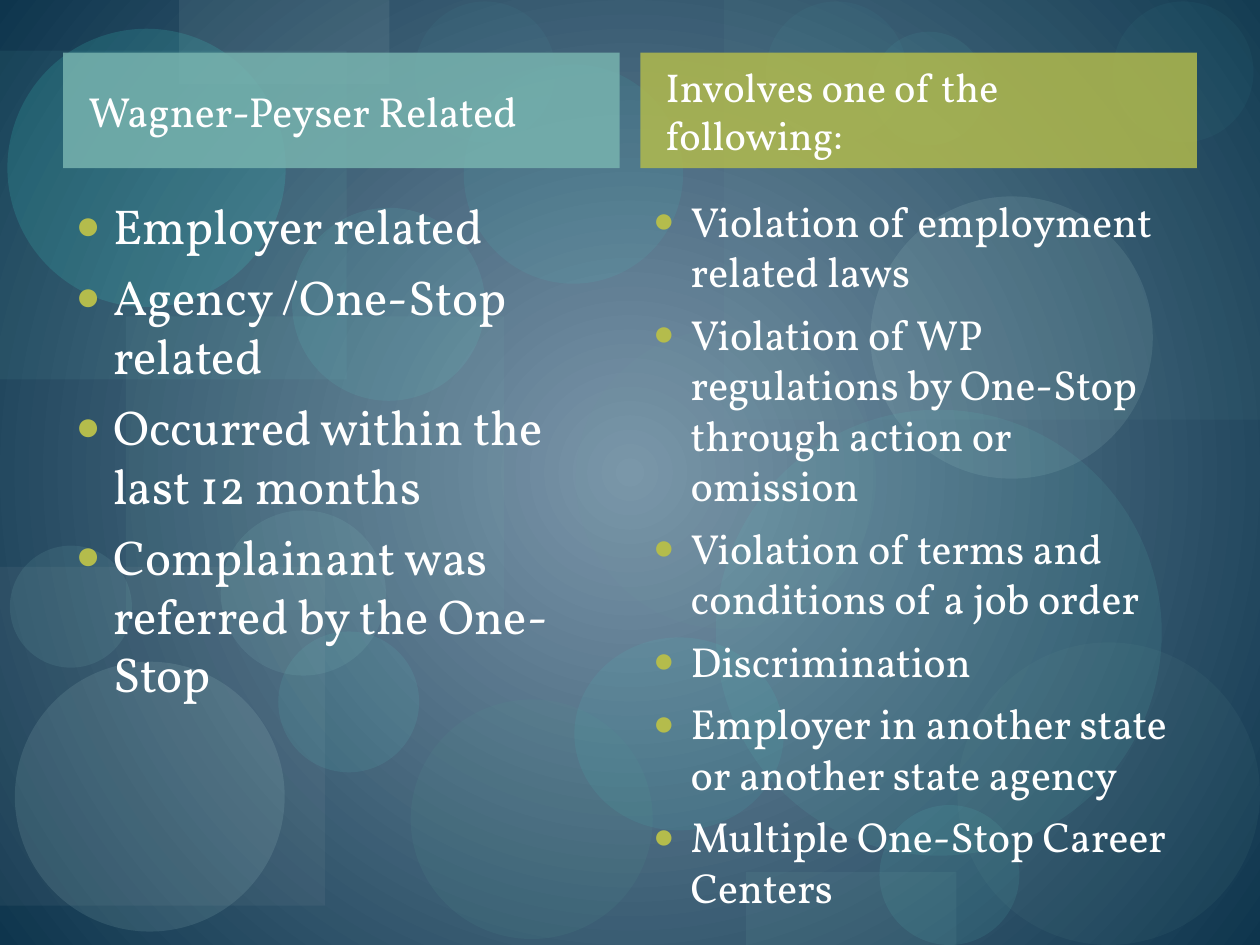
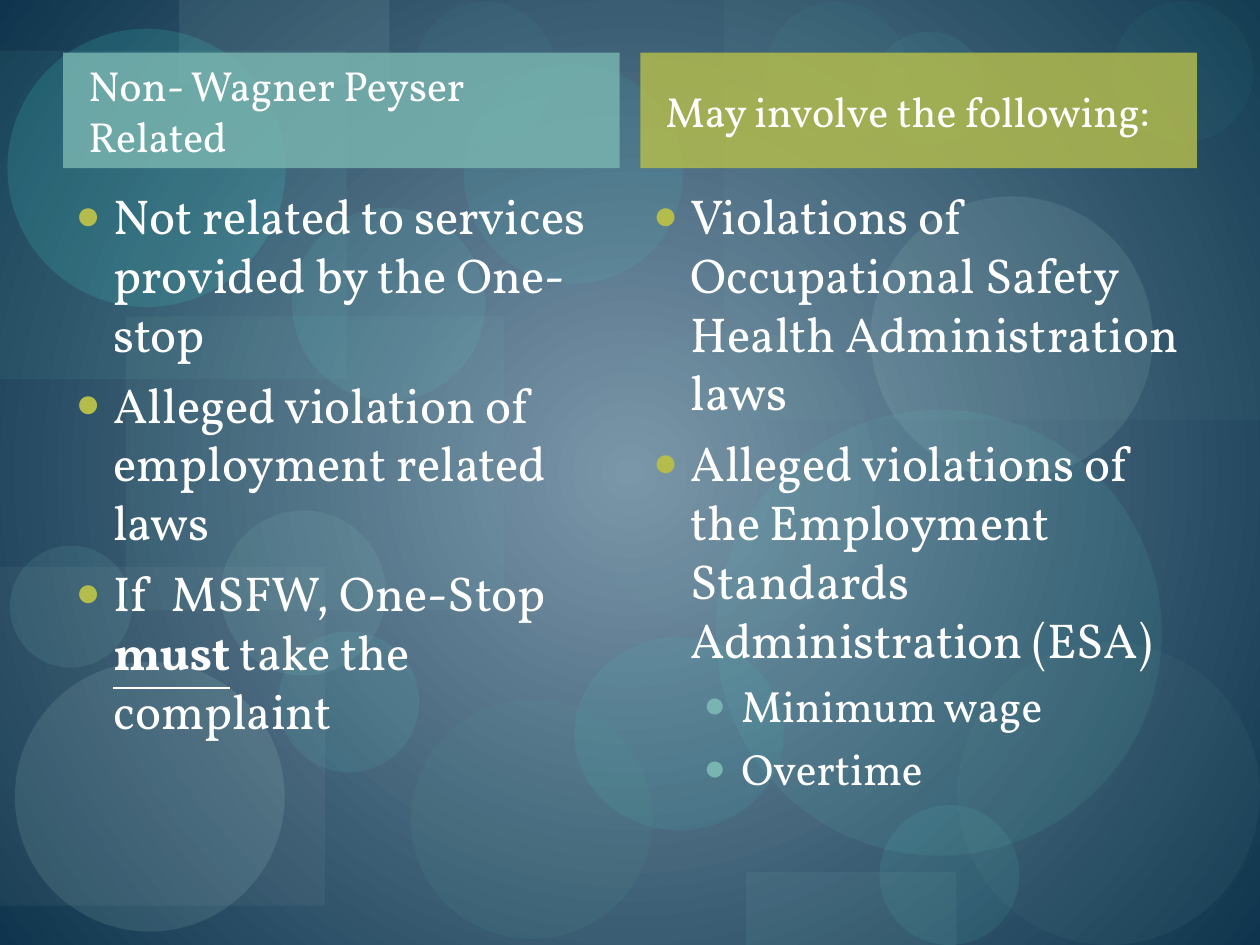
from lxml import etree
from pptx import Presentation
from pptx.dml.color import RGBColor
from pptx.enum.shapes import MSO_SHAPE as Preset
from pptx.enum.text import MSO_ANCHOR as Anchor, MSO_AUTO_SIZE as AutoSize
from pptx.oxml.ns import qn
from pptx.util import Cm, Pt

FONT = "Vollkorn"
WHITE, TEAL, OLIVE = "FFFFFF", "79B5B0", "B4BC4C"
CENTER_BLUE, EDGE_BLUE = "7B96AA", "0E354D"
COMPARISON_LAYOUT = 4
COLUMN_LEFTS = (1.27, 12.91)
COLUMN_WIDTH = 11.22
HEADER_TOP, HEADER_HEIGHT = 1.06, 2.33
HEADER_FILLS = (TEAL, OLIVE)
HEADER_OPACITY = 83
HEADER_FRAME = {
    "margin_left": Cm(0.51), "margin_right": Cm(0.25),
    "margin_top": Cm(0.25), "margin_bottom": Cm(0.25),
    "vertical_anchor": Anchor.MIDDLE,
}
LIST_FRAME = {"vertical_anchor": Anchor.TOP}
LEVELS = (
    {"indent": 0.76, "before": 7, "bullet": OLIVE},
    {"indent": 1.78, "before": 6, "bullet": TEAL},
)
HANGING = Cm(0.76)

BOX, DISC = Preset.RECTANGLE, Preset.OVAL
DECORATIONS = (
    (BOX, 2.54, 6.38, 7.62, 5.92, TEAL, 9),
    (DISC, 8.28, 14.1, 4.88, 4.83, "549791", 13),
    (BOX, 14.6, 0, 10.8, 8.46, TEAL, 6),
    (BOX, 0, 11.43, 6.55, 6.83, "B2B7BA", 8),
    (DISC, 11.61, 6.63, 6.05, 6.05, "70A39E", 8),
    (DISC, 17.73, 16.23, 2.82, 2.82, "65E8DC", 9),
    (DISC, 17.55, 3.96, 5.69, 5.69, "C1E8E4", 11),
    (DISC, 0.3, 13.34, 5.44, 5.44, "C1E8E4", 12),
    (DISC, 5.61, 12.73, 2.84, 2.84, "65E8DC", 9),
    (DISC, 11.58, 12.85, 4.22, 3.89, "44EADC", 8),
    (BOX, 0, 1.02, 6.99, 6.63, "77D6CE", 7),
    (BOX, 3.61, 0, 4.24, 1.7, "BED7D4", 10),
    (DISC, 0.15, 0.58, 5.61, 5.61, "44EADC", 15),
    (DISC, 0.2, 11, 2.46, 2.46, "97DCD6", 10),
    (DISC, 5.89, 4.19, 3.89, 3.89, "65E8DC", 9),
    (DISC, 9.35, 1.3, 4.42, 4.42, "44EADC", 8),
    (DISC, 14.43, 8.26, 8.99, 8.99, "61CDC4", 10),
    (DISC, 15.44, 0.03, 2.84, 2.84, "65E8DC", 4),
    (DISC, 19.3, 12.95, 6.1, 6.1, "70A39E", 8),
    (DISC, 4.45, 10.29, 3.33, 3.33, "97DCD6", 10),
    (DISC, 17.58, 0.64, 2.29, 2.29, "65E8DC", 6),
    (DISC, 22.43, 0.03, 2.84, 2.84, "65E8DC", 4),
    (BOX, 15.04, 17.58, 4.24, 1.47, TEAL, 10),
    (DISC, 8.36, 0.03, 2.84, 2.84, "65E8DC", 4),
)

RELATED = {
    "headers": (("Wagner-Peyser Related", 24), ("Involves one of the following:", 23)),
    "list_top": 3.81,
    "lists": (
        {"height": 13.23, "sizes": (28,), "items": (
            (0, "Employer related"),
            (0, "Agency /One-Stop related"),
            (0, "Occurred within the last 12 months"),
            (0, "Complainant was referred by the One-Stop"),
        )},
        {"height": 15.24, "sizes": (24,), "items": (
            (0, "Violation of employment related laws"),
            (0, "Violation of WP regulations by One-Stop through action or omission"),
            (0, "Violation of terms and conditions of a job order"),
            (0, "Discrimination"),
            (0, "Employer in another state or another state agency"),
            (0, "Multiple One-Stop Career Centers"),
        )},
    ),
}
NON_RELATED = {
    "headers": (("Non- Wagner Peyser Related", 24), ("May involve the following:", 24)),
    "list_top": 3.61,
    "lists": (
        {"height": 13.44, "sizes": (28,), "items": (
            (0, "Not related to services provided by the One-stop"),
            (0, "Alleged violation of employment related laws"),
            (0, "If  MSFW, One-Stop **must** take the complaint"),
        )},
        {"height": 13.34, "sizes": (28, 25), "items": (
            (0, "Violations of Occupational Safety Health Administration laws"),
            (0, "Alleged violations of the Employment Standards Administration (ESA)"),
            (1, "Minimum wage"),
            (1, "Overtime"),
        )},
    ),
}


def color(value):
    """Turn a hex string into a colour."""
    return RGBColor.from_string(value)


def apply(target, formats):
    """Set each named attribute of the target."""
    for name, value in formats.items():
        setattr(target, name, value)


def place(box, left, top, width, height):
    """Move and size a box, in centimetres."""
    apply(box, {"left": Cm(left), "top": Cm(top),
                "width": Cm(width), "height": Cm(height)})


def fill_translucent(box, value, opacity):
    """Fill a box with a colour at the given percentage of opacity."""
    box.fill.solid()
    box.fill.fore_color.rgb = color(value)
    tint = box.element.spPr.find(f".//{qn('a:srgbClr')}")
    etree.SubElement(tint, qn("a:alpha"), val=str(opacity * 1000))


def paint_background(master):
    """Give the master a radial gradient background."""
    fill = master.background.fill
    fill.gradient()
    for stop, value in zip(fill.gradient_stops, (CENTER_BLUE, EDGE_BLUE)):
        stop.color.rgb = color(value)
    linear = master.element.find(f".//{qn('p:bgPr')}//{qn('a:lin')}")
    gradient = linear.getparent()
    gradient.remove(linear)
    radial = etree.SubElement(gradient, qn("a:path"), path="circle")
    sides = dict.fromkeys("ltrb", "50000")
    etree.SubElement(radial, qn("a:fillToRect"), **sides)


def decorate(master, page):
    """Build the translucent shapes on a page and move them to the master."""
    for preset, left, top, width, height, value, opacity in DECORATIONS:
        shape = page.shapes.add_shape(preset, Cm(left), Cm(top), Cm(width), Cm(height))
        shape.shadow.inherit = False
        shape.line.fill.background()
        fill_translucent(shape, value, opacity)
        master.shapes.element.append(shape.element)


def add_span(para, text, size, strong=False):
    """Add a run of white text, bold and underlined if strong."""
    span = para.add_run()
    span.text = text
    apply(span.font, {"name": FONT, "size": Pt(size), "bold": strong, "underline": strong})
    span.font.color.rgb = color(WHITE)


def add_bullet(para, level):
    """Give a paragraph the bullet, indent and level of its list level."""
    style = LEVELS[level]
    para.level = level
    properties = para._p.get_or_add_pPr()
    properties.set("marL", str(Cm(style["indent"])))
    properties.set("indent", str(-HANGING))
    bullet_color = etree.SubElement(properties, qn("a:buClr"))
    etree.SubElement(bullet_color, qn("a:srgbClr"), val=style["bullet"])
    etree.SubElement(properties, qn("a:buSzPct"), val="85000")
    etree.SubElement(properties, qn("a:buChar"), char="●")


def prepare_frame(box, formats):
    """Format the text frame of a box and return it."""
    frame = box.text_frame
    apply(frame, {"word_wrap": True, "auto_size": AutoSize.NONE, **formats})
    return frame


def fill_header(box, left, text, size, value):
    """Turn a placeholder into a coloured column header."""
    place(box, left, HEADER_TOP, COLUMN_WIDTH, HEADER_HEIGHT)
    fill_translucent(box, value, HEADER_OPACITY)
    para = prepare_frame(box, HEADER_FRAME).paragraphs[0]
    para.space_before = Pt(0)
    add_span(para, text, size)


def fill_list(box, left, top, content):
    """Fill a placeholder with a bulleted list; ** marks strong words."""
    place(box, left, top, COLUMN_WIDTH, content["height"])
    frame = prepare_frame(box, LIST_FRAME)
    for number, (level, text) in enumerate(content["items"]):
        para = frame.add_paragraph() if number else frame.paragraphs[0]
        add_bullet(para, level)
        para.space_before = Pt(LEVELS[level]["before"] if number else 0)
        for part, words in enumerate(text.split("**")):
            add_span(para, words, content["sizes"][level], part % 2 == 1)


def add_comparison(deck, content):
    """Add a page with two headed columns."""
    page = deck.slides.add_slide(deck.slide_layouts[COMPARISON_LAYOUT])
    title, *boxes = page.placeholders
    title.element.getparent().remove(title.element)
    for column, left in enumerate(COLUMN_LEFTS):
        header, body = boxes[2 * column:2 * column + 2]
        fill_header(header, left, *content["headers"][column], HEADER_FILLS[column])
        fill_list(body, left, content["list_top"], content["lists"][column])
    return page


def main():
    """Build and save the deck."""
    deck = Presentation()
    apply(deck, {"slide_width": Cm(25.4), "slide_height": Cm(19.05)})
    pages = [add_comparison(deck, content) for content in (RELATED, NON_RELATED)]
    paint_background(deck.slide_master)
    decorate(deck.slide_master, pages[0])
    deck.save("out.pptx")


if __name__ == "__main__":
    main()
